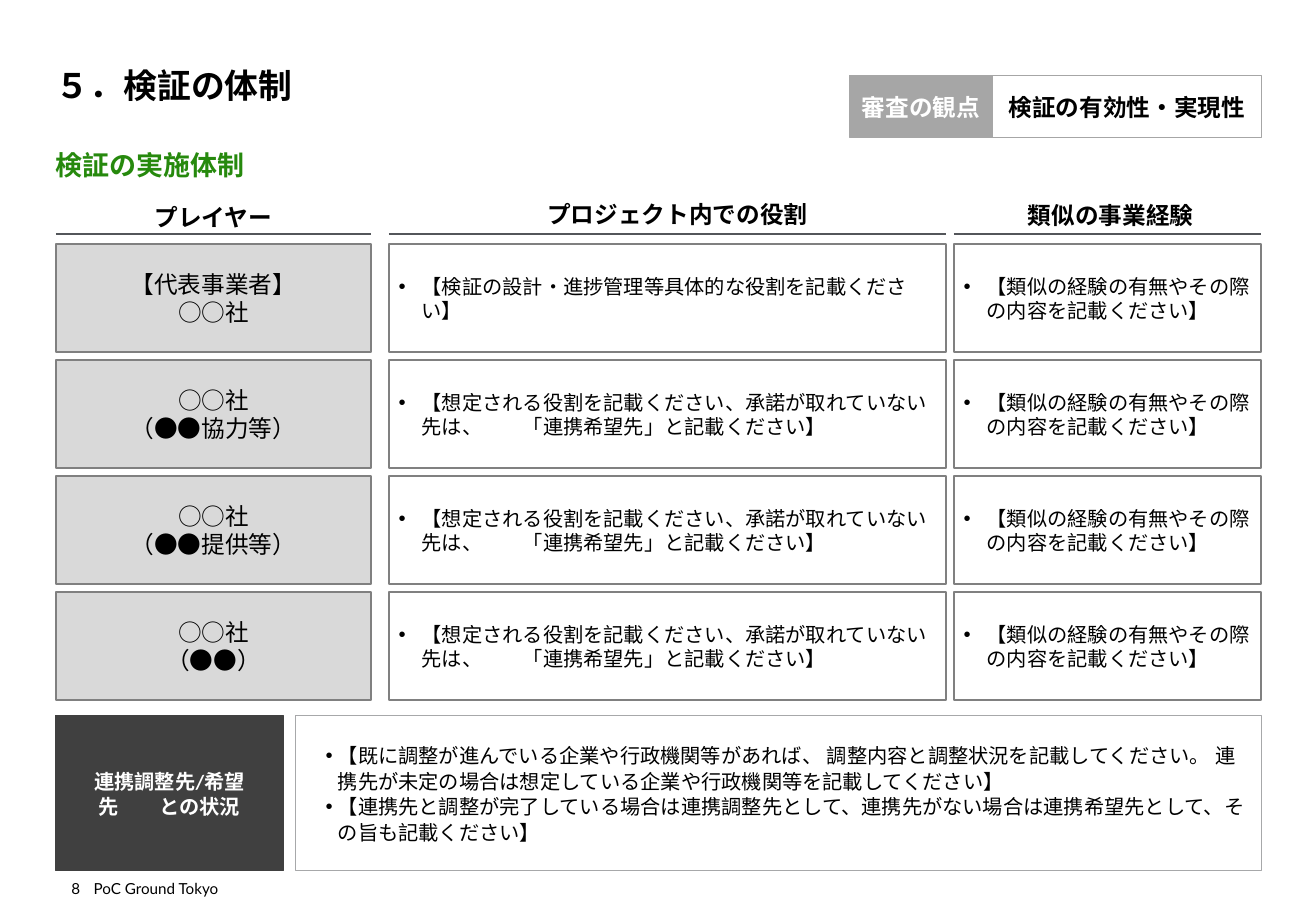
from lxml.etree import SubElement
from pptx import Presentation
from pptx.dml.color import RGBColor
from pptx.enum.shapes import MSO_CONNECTOR, MSO_SHAPE
from pptx.enum.text import MSO_ANCHOR, MSO_AUTO_SIZE, PP_ALIGN
from pptx.oxml.ns import qn
from pptx.util import Pt

PX = 4572
SLIDE_WIDTH, SLIDE_HEIGHT = 2166, 1500
LEFT, RIGHT = 92, 2076
CJK = "Noto Sans CJK JP"
COLORS = {
    "black": "000000", "white": "FFFFFF", "green": "26890D", "rule": "53565A",
    "cell_line": "808080", "player": "D9D9D9", "dark": "404040",
    "label": "A6A6A6", "status_line": "A7A8AA",
}
PENDING_ROLE = "【想定される役割を記載ください、承諾が取れていない先は、　　「連携希望先」と記載ください】"
EXPERIENCE = "【類似の経験の有無やその際の内容を記載ください】"
TEAM = [
    ("【代表事業者】\v○○社", "【検証の設計・進捗管理等具体的な役割を記載ください】", EXPERIENCE),
    ("○○社\n（●●協力等）", PENDING_ROLE, EXPERIENCE),
    ("○○社\n（●●提供等）", PENDING_ROLE, EXPERIENCE),
    ("○○社\n（●●）", PENDING_ROLE, EXPERIENCE),
]
COLUMNS = [
    ("プレイヤー", (LEFT, 519), (182, 326, 338)),
    ("プロジェクト内での役割", (640, 917), (856, 322, 518)),
    ("類似の事業経験", (1570, 506), (1648, 324, 360)),
]
STATUS = (
    "【既に調整が進んでいる企業や行政機関等があれば、 調整内容と調整状況を記載してください。\u00a0"
    "連携先が未定の場合は想定している企業や行政機関等を記載してください】\n"
    "【連携先と調整が完了している場合は連携調整先として、連携先がない場合は連携希望先として、"
    "その旨も記載ください】"
)


def rgb(color):
    """Return the named colour."""
    return RGBColor.from_string(COLORS[color])


def emu(box):
    """Turn px lengths into EMU."""
    return [length * PX for length in box]


def add_bullet(paragraph, margin, indent):
    """Give a paragraph a hanging round bullet."""
    properties = paragraph._p.get_or_add_pPr()
    properties.set("marL", str(margin * PX))
    properties.set("indent", str(indent * PX))
    bullet_color = SubElement(properties, qn("a:buClr"))
    SubElement(bullet_color, qn("a:srgbClr"), val=COLORS["black"])
    SubElement(properties, qn("a:buFont"), typeface="Arial")
    SubElement(properties, qn("a:buChar"), char="•")


def write(holder, text, size, color="black", font=CJK, bold=False, align=PP_ALIGN.LEFT,
          anchor=MSO_ANCHOR.MIDDLE, insets=(16, 16, 16, 16), spacing=1.0, bullet=None, wrap=True):
    """Fill a shape with formatted text."""
    frame = holder.text_frame
    frame.text = text
    frame.auto_size = MSO_AUTO_SIZE.NONE
    frame.word_wrap = wrap
    frame.vertical_anchor = anchor
    frame.margin_left, frame.margin_top, frame.margin_right, frame.margin_bottom = emu(insets)
    for paragraph in frame.paragraphs:
        paragraph.alignment = align
        paragraph.line_spacing = spacing
        paragraph.space_before = Pt(0)
        if bullet:
            add_bullet(paragraph, *bullet)
        for run in paragraph.runs:
            run.font.size = Pt(size)
            run.font.bold = bold
            run.font.name = font
            run.font.color.rgb = rgb(color)
            SubElement(run._r.get_or_add_rPr(), qn("a:ea"), typeface=CJK)


def add_panel(slide, box, fill, line, weight, text, size, **style):
    """Draw a filled, outlined rectangle with text."""
    panel = slide.shapes.add_shape(MSO_SHAPE.RECTANGLE, *emu(box))
    panel.shadow.inherit = False
    panel.fill.solid()
    panel.fill.fore_color.rgb = rgb(fill)
    panel.line.color.rgb = rgb(line)
    panel.line.width = Pt(weight)
    write(panel, text, size, **style)


def add_label(slide, box, text, size, **style):
    """Place a plain text box."""
    write(slide.shapes.add_textbox(*emu(box)), text, size, **style)


def add_headings(slide):
    """Fill the title and the section heading placeholders."""
    title, section = slide.shapes.title, slide.placeholders[1]
    for heading, box, text, size, color, anchor in (
        (title, (LEFT, 40, 1984, 134), "５．検証の体制", 20, "black", MSO_ANCHOR.BOTTOM),
        (section, (LEFT, 220, 952, 102), "検証の実施体制", 16, "green", MSO_ANCHOR.MIDDLE),
    ):
        heading.left, heading.top, heading.width, heading.height = emu(box)
        write(heading, text, size, color, "Lato", True, anchor=anchor, insets=(0, 0, 0, 0))
    properties = section.text_frame.paragraphs[0]._p.get_or_add_pPr()
    properties.set("marL", "0")
    properties.set("indent", "0")
    SubElement(properties, qn("a:buNone"))


def add_criterion(slide, left, top, width, height):
    """Draw the review criterion beside its label."""
    label_width = 236
    style = {"bold": True, "align": PP_ALIGN.CENTER, "spacing": 1.06}
    add_panel(slide, (left + label_width, top, width - label_width, height), "white", "label", 0.5,
              "検証の有効性・実現性", 14, **style)
    add_panel(slide, (left, top, label_width, height), "label", "label", 0.5,
              "審査の観点", 14, color="white", **style)


def add_column_header(slide, left, width, rule_top, header_box, text):
    """Draw a column header above its rule."""
    add_label(slide, (*header_box, 62), text, 14, font="Calibri", bold=True,
              align=PP_ALIGN.CENTER, anchor=MSO_ANCHOR.BOTTOM, insets=(8, 8, 8, 8), spacing=1.06)
    rule = slide.shapes.add_connector(
        MSO_CONNECTOR.STRAIGHT, *emu((left, rule_top, left + width, rule_top)))
    rule.line.color.rgb = rgb("rule")
    rule.line.width = Pt(1.5)
    SubElement(rule._element.spPr, qn("a:effectLst"))


def add_team(slide, top, pitch, height):
    """Draw the grid of players, roles and experience."""
    for column, (header, (left, width), (text_left, text_top, text_width)) in enumerate(COLUMNS):
        add_column_header(slide, left, width, top - 17, (text_left, text_top, text_width), header)
        for row, member in enumerate(TEAM):
            box = (left, top + row * pitch, width, height)
            if column == 0:
                add_panel(slide, box, "player", "cell_line", 1, member[column], 14,
                          align=PP_ALIGN.CENTER)
            else:
                add_panel(slide, box, "white", "cell_line", 1, member[column], 12,
                          bullet=(38, -38))


def add_status(slide, left, top, width, height):
    """Draw the partner coordination status and its label."""
    label_width, gap = 374, 20
    text_left = left + label_width + gap
    add_panel(slide, (text_left, top, left + width - text_left, height), "white", "status_line",
              0.5, STATUS, 12, font="Calibri", insets=(32, 16, 16, 16), spacing=1.06,
              bullet=(38, -20))
    add_panel(slide, (left, top, label_width, height), "dark", "dark", 0.5,
              "連携調整先/希望先　　との状況", 12, color="white", font="Calibri", bold=True,
              align=PP_ALIGN.CENTER, spacing=1.06)


def add_footer(slide, left, top, height):
    """Place the page number and the programme name."""
    style = {"font": "Lato", "anchor": MSO_ANCHOR.BOTTOM, "insets": (0, 0, 0, 0)}
    add_label(slide, (left, top, 40, height), "8", 9, align=PP_ALIGN.RIGHT, wrap=False, **style)
    add_label(slide, (left + 62, top, 890, height), "PoC Ground Tokyo", 9, **style)


def main():
    """Build and save the slide."""
    deck = Presentation()
    deck.slide_width, deck.slide_height = emu((SLIDE_WIDTH, SLIDE_HEIGHT))
    slide = deck.slides.add_slide(deck.slide_layouts[1])
    add_headings(slide)
    add_criterion(slide, 1398, 124, RIGHT - 1398, 102)
    add_team(slide, 402, 191, 178)
    add_status(slide, LEFT, 1178, RIGHT - LEFT, 256)
    add_footer(slide, LEFT, 1440, 38)
    deck.save("out.pptx")


if __name__ == "__main__":
    main()
